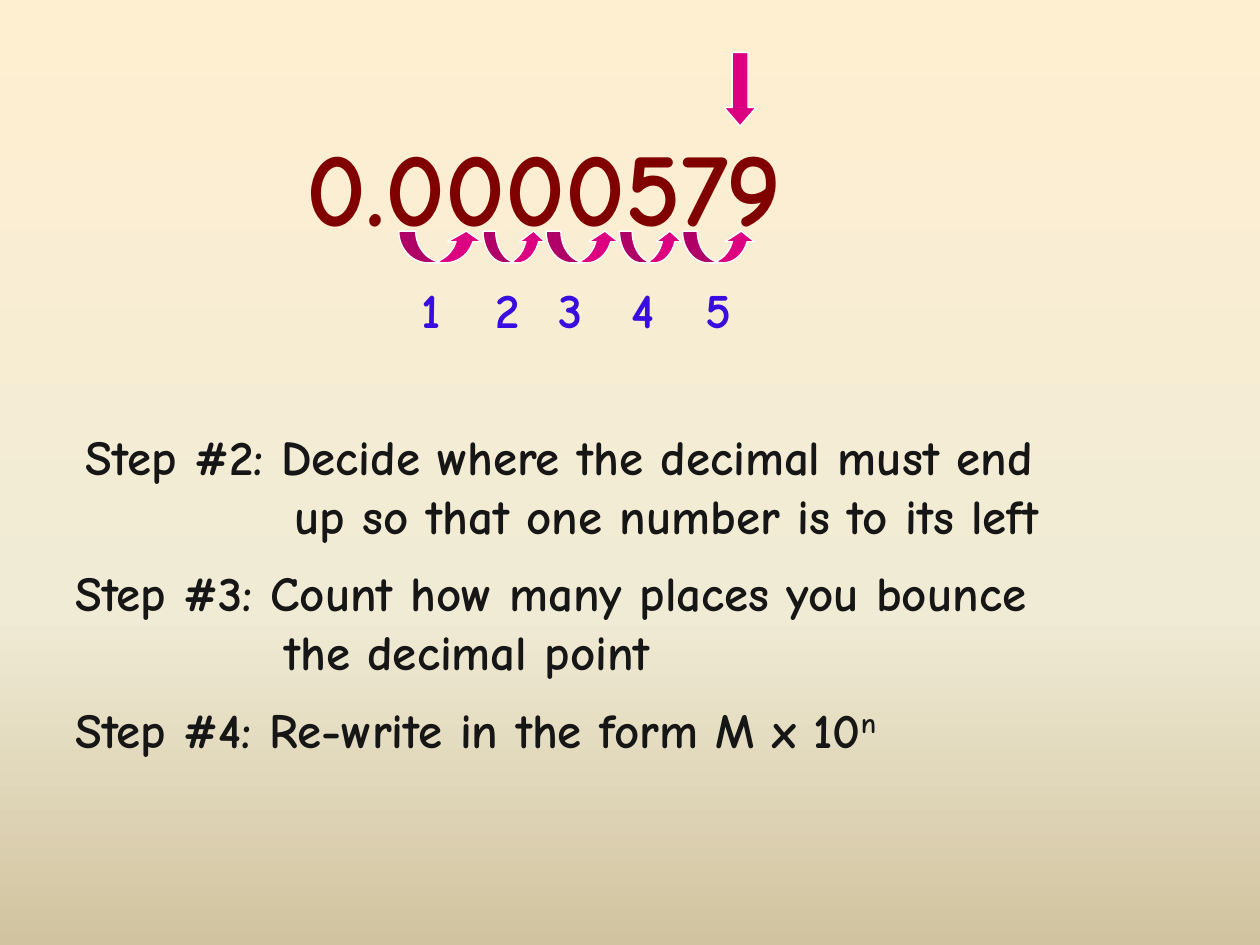
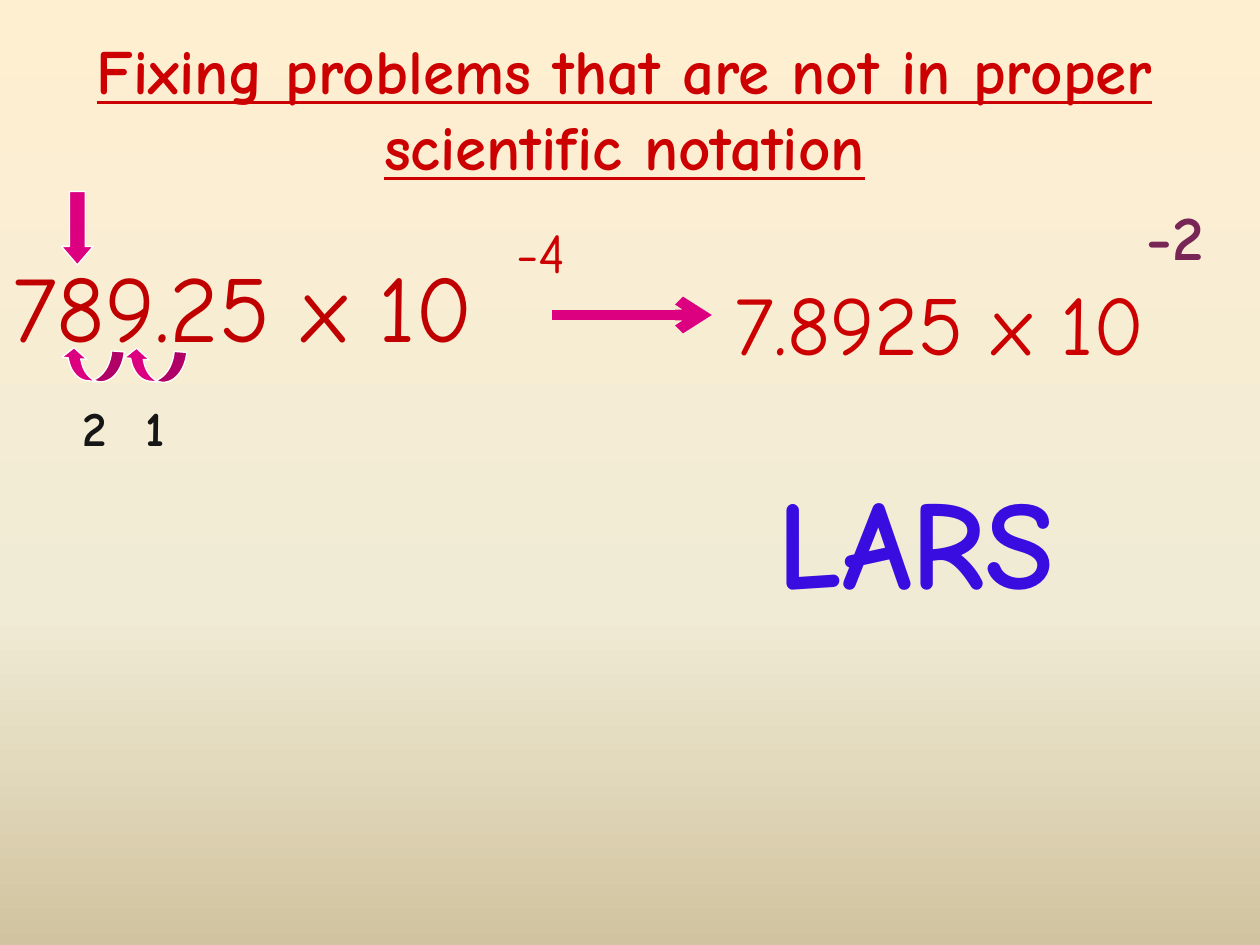
"""Build two slides on moving the decimal point in scientific notation."""
import dataclasses

import lxml.etree
import pptx
import pptx.dml.color
import pptx.enum.shapes
import pptx.enum.text
import pptx.oxml.ns
import pptx.shapes.autoshape
import pptx.slide
import pptx.text.text
import pptx.util

Cm = pptx.util.Cm
RGB = pptx.dml.color.RGBColor
Preset = pptx.enum.shapes.MSO_SHAPE
qn = pptx.oxml.ns.qn

FONT = "Comic Neue"
MAROON = RGB(0x80, 0x00, 0x00)
CRIMSON = RGB(0xC0, 0x00, 0x00)
RED = RGB(0xCC, 0x00, 0x00)
PLUM = RGB(0x77, 0x26, 0x55)
BLUE = RGB(0x39, 0x0C, 0xE0)
INK = RGB(0x16, 0x16, 0x16)
PINK = RGB(0xDC, 0x00, 0x81)
WHITE = RGB(0xFF, 0xFF, 0xFF)
BACKDROP = (
    (0, RGB(0xFF, 0xEF, 0xD1)),
    (65, RGB(0xF0, 0xEB, 0xD5)),
    (100, RGB(0xD1, 0xC3, 0x9F)),
)
STEP_INDENT = Cm(4.21)
BOUNCE_HEIGHT = 0.64
COUNT_SIZE = 28


@dataclasses.dataclass(frozen=True)
class Label:
    """A text in one style, placed in centimetres."""

    lines: tuple[str, ...]
    left: float
    top: float
    width: float
    height: float
    size: int
    color: RGB
    bold: bool = True
    superscript: str = ""


@dataclasses.dataclass(frozen=True)
class Bounce:
    """One hop of the decimal point, with the place of its count."""

    left: float
    top: float
    width: float
    count_left: float


def paint_backdrop(master: pptx.slide.SlideMaster) -> None:
    """Give every slide the vertical sand gradient."""
    fill = master.background.fill
    fill.gradient()
    fill.gradient_angle = 270
    stops = master.element.find(".//" + qn("a:gsLst"))
    for stop in list(stops):
        stops.remove(stop)
    for percent, color in BACKDROP:
        stop = lxml.etree.SubElement(stops, qn("a:gs"), pos=str(percent * 1000))
        lxml.etree.SubElement(stop, qn("a:srgbClr"), val=str(color))


def add_run(
    paragraph: "pptx.text.text._Paragraph", text: str, size: int, color: RGB, bold: bool
) -> "pptx.text.text._Run":
    """Add a styled run to a paragraph."""
    run = paragraph.add_run()
    run.text = text
    run.font.name = FONT
    run.font.size = pptx.util.Pt(size)
    run.font.bold = bold
    run.font.color.rgb = color
    return run


def add_label(slide: pptx.slide.Slide, label: Label) -> None:
    """Draw a label, indenting each line after the first."""
    box = slide.shapes.add_textbox(
        Cm(label.left), Cm(label.top), Cm(label.width), Cm(label.height)
    )
    frame = box.text_frame
    frame.word_wrap = True
    for index, line in enumerate(label.lines):
        paragraph = frame.add_paragraph() if index else frame.paragraphs[0]
        if index:
            paragraph._p.get_or_add_pPr().set("marL", str(STEP_INDENT))
        add_run(paragraph, line, label.size, label.color, label.bold)
    if label.superscript:
        raised = add_run(
            paragraph, label.superscript, label.size, label.color, label.bold
        )
        raised._r.get_or_add_rPr().set("baseline", "30000")


def add_arrow(
    slide: pptx.slide.Slide,
    preset: Preset,
    left: float,
    top: float,
    width: float,
    height: float,
    adjustments: tuple[float, ...],
) -> pptx.shapes.autoshape.Shape:
    """Draw a pink arrow with a thin white outline."""
    arrow = slide.shapes.add_shape(preset, Cm(left), Cm(top), Cm(width), Cm(height))
    arrow.shadow.inherit = False
    arrow.fill.solid()
    arrow.fill.fore_color.rgb = PINK
    arrow.line.color.rgb = WHITE
    arrow.line.width = pptx.util.Pt(0.75)
    for index, value in enumerate(adjustments):
        arrow.adjustments[index] = value
    return arrow


def add_pointer(slide: pptx.slide.Slide, left: float, top: float) -> None:
    """Point down at the place where the decimal ends up."""
    add_arrow(slide, Preset.DOWN_ARROW, left, top, 0.64, 1.48, (0.5, 0.58))


def add_bounces(
    slide: pptx.slide.Slide,
    bounces: list[Bounce],
    preset: Preset,
    rotation: float,
    count_top: float,
    count_color: RGB,
) -> None:
    """Draw the hops of the decimal point and number them."""
    for count, bounce in enumerate(bounces, start=1):
        ratio = bounce.width / BOUNCE_HEIGHT
        hop = add_arrow(
            slide, preset, bounce.left, bounce.top, bounce.width, BOUNCE_HEIGHT,
            (0.2 * ratio, 0.4 * ratio, 1 / 3),
        )
        hop.rotation = rotation
        add_label(
            slide,
            Label((str(count),), bounce.count_left, count_top, 1.12, 1.45,
                  COUNT_SIZE, count_color),
        )


def add_result_arrow(slide: pptx.slide.Slide) -> None:
    """Lead from the problem to its corrected form."""
    line = slide.shapes.add_connector(
        pptx.enum.shapes.MSO_CONNECTOR.STRAIGHT,
        Cm(11.13), Cm(6.35), Cm(14.35), Cm(6.35),
    )
    line.line.color.rgb = PINK
    line.line.width = pptx.util.Pt(6)
    lxml.etree.SubElement(line.line._get_or_add_ln(), qn("a:tailEnd"), type="arrow")
    lxml.etree.SubElement(line._element.spPr, qn("a:effectLst"))


def set_title(slide: pptx.slide.Slide, text: str) -> None:
    """Place and style the underlined slide title."""
    title = slide.shapes.title
    title.left, title.top = Cm(1.67), Cm(0.64)
    title.width, title.height = Cm(21.84), Cm(3.18)
    frame = title.text_frame
    frame.word_wrap = True
    frame.auto_size = pptx.enum.text.MSO_AUTO_SIZE.NONE
    frame.vertical_anchor = pptx.enum.text.MSO_ANCHOR.BOTTOM
    paragraph = frame.paragraphs[0]
    paragraph.alignment = pptx.enum.text.PP_ALIGN.CENTER
    add_run(paragraph, text, 36, RED, True).font.underline = True


def build_steps(slide: pptx.slide.Slide) -> None:
    """Show the steps for a small number."""
    add_label(slide, Label(("0.0000579",), 5.92, 2.33, 13.13, 2.79, 60, MAROON))
    add_pointer(slide, 14.6, 1.06)
    steps = (
        Label(("Step #2: Decide where the decimal must end",
               "up so that one number is to its left"),
              1.48, 8.47, 23.06, 2.62, 28, INK),
        Label(("Step #3: Count how many places you bounce", "the decimal point"),
              1.27, 11.22, 23.06, 2.62, 28, INK),
        Label(("Step #4: Re-write in the form M x 10",),
              1.27, 13.97, 23.06, 1.45, 28, INK, superscript="n"),
    )
    for step in steps:
        add_label(slide, step)
    bounces = []
    left = 8.04
    for width, count_shift in (
        (1.7, 0.21), (1.27, 0), (1.48, 0), (1.27, 0), (1.48, 0.21)
    ):
        bounces.append(Bounce(left, 4.66, width, left + count_shift))
        left += width
    add_bounces(slide, bounces, Preset.CURVED_UP_ARROW, 0, 5.52, BLUE)


def build_fixing(slide: pptx.slide.Slide) -> None:
    """Show how to correct a number that is not in proper notation."""
    set_title(slide, "Fixing problems that are not in proper scientific notation")
    labels = (
        Label(("789.25 x 10",), 0, 4.88, 15.29, 4.88, 54, CRIMSON, False),
        Label(("-2",), 22.86, 3.86, 2.54, 1.8, 36, PLUM),
        Label(("LARS",), 15.43, 9.22, 7.21, 3.33, 72, BLUE),
        Label(("-4",), 10.16, 4.27, 2.06, 1.63, 32, RED, False),
        Label(("7.8925 x 10",), 14.56, 5.34, 10.84, 2.31, 48, RED, False),
    )
    for label in labels:
        add_label(slide, label)
    add_pointer(slide, 1.24, 3.86)
    bounces = [Bounce(2.47, 7.05, 1.27, 2.69), Bounce(1.21, 7.04, 1.27, 1.42)]
    add_bounces(slide, bounces, Preset.CURVED_DOWN_ARROW, 184.8, 7.89, INK)
    add_result_arrow(slide)


def main() -> None:
    """Build and save the presentation."""
    deck = pptx.Presentation()
    deck.slide_width, deck.slide_height = Cm(25.4), Cm(19.05)
    paint_backdrop(deck.slide_master)
    title_only, blank = deck.slide_layouts[5], deck.slide_layouts[6]
    build_steps(deck.slides.add_slide(blank))
    build_fixing(deck.slides.add_slide(title_only))
    deck.save("out.pptx")


if __name__ == "__main__":
    main()
